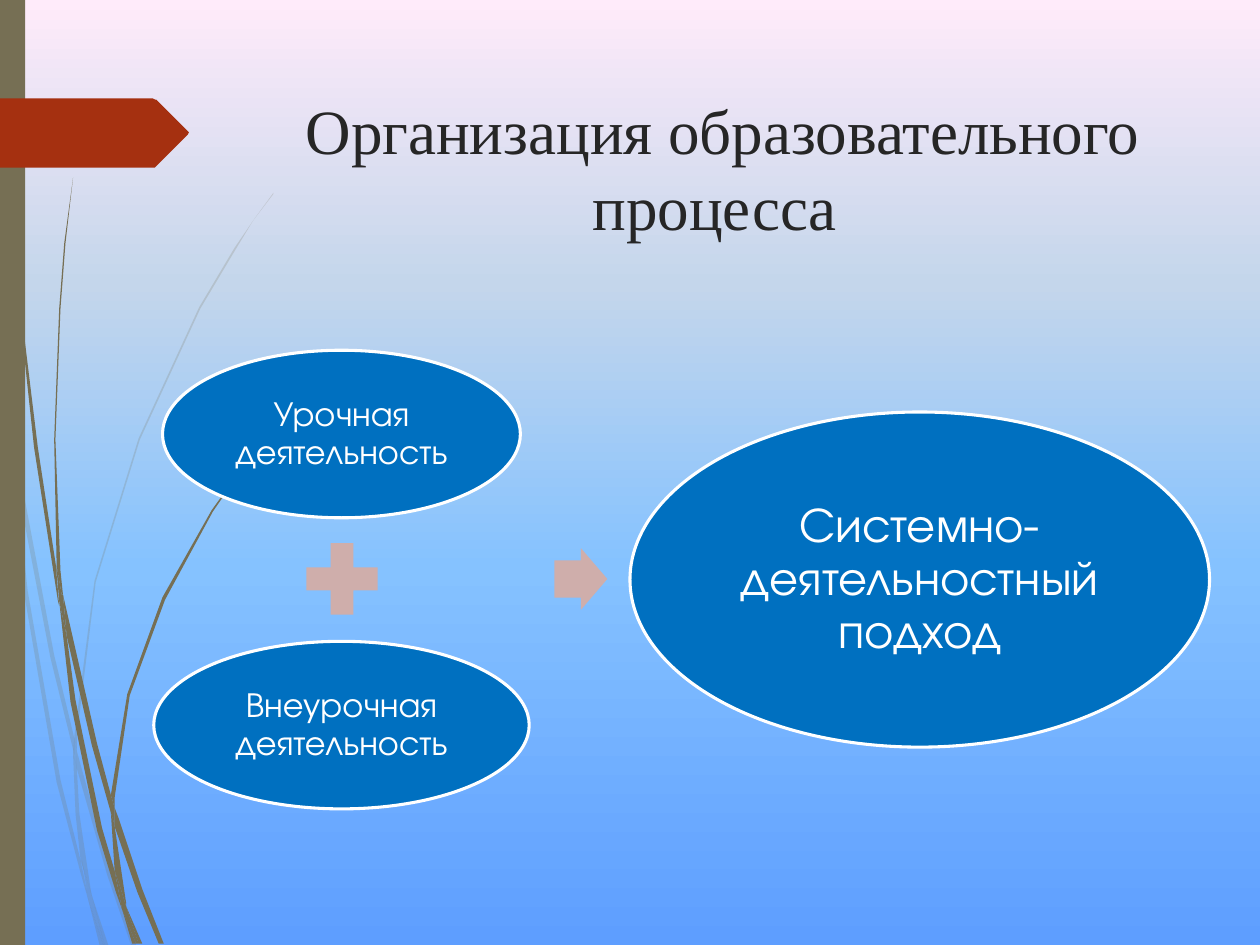
from copy import deepcopy

from pptx import Presentation
from pptx.dml.color import RGBColor
from pptx.enum.shapes import MSO_SHAPE
from pptx.enum.text import MSO_ANCHOR, PP_ALIGN
from pptx.oxml.ns import qn
from pptx.util import Emu, Pt
from lxml.etree import SubElement

PX = 9144

COLORS = {
    "stem": "766F54",
    "tab": "A53010",
    "title": "262626",
    "oval": "0070C0",
    "sign": "CFAEAB",
    "white": "FFFFFF",
}

SKY = [(0, "5E9EFF"), (0.4, "85C2FF"), (0.7, "C4D6EB"), (1, "FFEBFA")]

PALE_STEMS = [
    [(8, 350), (6, 322), (0, 282), (0, 299), (7, 344)],
    [(40, 522), (59, 599), (59, 586), (43, 520), (10, 345), (12, 376)],
    [(64, 607), (61, 596), (61, 610), (85, 694), (104, 750), (108, 750), (88, 692)],
    [(83, 750), (86, 750), (73, 711)],
    [(64, 683), (48, 619), (22, 469), (12, 376), (8, 350), (19, 470), (45, 621),
     (64, 693), (70, 714), (69, 707)],
    [(58, 599), (60, 646), (64, 683), (67, 692), (73, 711), (72, 706), (63, 646),
     (61, 610), (61, 608)],
    [(61, 584), (76, 462), (111, 349), (159, 245), (187, 198), (201, 175), (217, 154),
     (217, 153), (201, 175), (186, 197), (158, 244), (110, 348), (75, 461), (59, 584),
     (59, 586), (61, 596)],
    [(70, 714), (79, 750), (82, 750)],
    [(61, 608), (61, 610), (61, 596), (59, 586), (58, 599)],
    [(67, 692), (65, 683), (69, 707), (70, 714), (82, 750), (83, 750), (73, 711)],
]

DARK_STEMS = [
    [(5, 110), (14, 233), (27, 355), (46, 477), (47, 481), (45, 457), (45, 453),
     (30, 355), (15, 232), (6, 109), (4, 48), (3, 0), (2, 0), (3, 48)],
    [(73, 592), (88, 645), (88, 633), (88, 631), (77, 590), (50, 472), (53, 505)],
    [(94, 649), (91, 641), (91, 656), (109, 708), (126, 749), (130, 749), (113, 706)],
    [(91, 691), (81, 657), (60, 556), (53, 505), (47, 477), (56, 557), (77, 659),
     (92, 708), (97, 722), (96, 717)],
    [(50, 472), (48, 453), (44, 349), (48, 245), (52, 193), (58, 141), (51, 193),
     (47, 245), (43, 349), (45, 449), (49, 472)],
    [(110, 749), (113, 749), (100, 719)],
    [(47, 477), (53, 505), (50, 472), (49, 472), (45, 449), (45, 453)],
    [(91, 633), (103, 552), (131, 476), (169, 406), (191, 374), (203, 359), (216, 344),
     (215, 344), (203, 358), (191, 373), (168, 405), (129, 474), (101, 551), (88, 631),
     (91, 641)],
    [(97, 722), (105, 749), (108, 749)],
    [(88, 645), (91, 691), (96, 706), (100, 719), (100, 716), (91, 656), (90, 651)],
    [(88, 645), (90, 651), (91, 656), (91, 641), (88, 631), (88, 633)],
    [(96, 706), (91, 691), (96, 717), (97, 722), (108, 749), (110, 749), (100, 719)],
]

TAB = [(149, 107), (124, 132), (123, 133), (121, 133), (0, 133), (0, 78), (121, 78),
       (123, 79), (124, 79), (149, 104), (150, 105)]


class SlideBuilder:
    def __init__(self, page, colors):
        self.page = page
        self.colors = colors

    def color(self, name):
        return RGBColor.from_string(self.colors[name])

    def background(self, stops):
        fill = self.page.background.fill
        fill.gradient()
        fill.gradient_angle = 90
        stop_list = self.page._element.find(".//" + qn("a:gsLst"))
        for _ in stops[2:]:
            stop_list.append(deepcopy(stop_list[0]))
        for stop, (position, value) in zip(fill.gradient_stops, stops):
            stop.position = position
            stop.color.rgb = RGBColor.from_string(value)

    def paint(self, shape, fill, opacity=100):
        shape.shadow.inherit = False
        shape.fill.solid()
        shape.fill.fore_color.rgb = self.color(fill)
        shape.line.fill.background()
        if opacity < 100:
            color = shape._element.spPr.find(".//" + qn("a:srgbClr"))
            SubElement(color, qn("a:alpha")).set("val", str(opacity * 1000))

    def outline(self, points, fill, opacity=100):
        builder = self.page.shapes.build_freeform(*points[0], scale=PX)
        builder.add_line_segments(points[1:], close=True)
        self.paint(builder.convert_to_shape(), fill, opacity)

    def shape(self, kind, box, fill, adjustments=()):
        shape = self.page.shapes.add_shape(kind, *(Emu(n * PX) for n in box))
        self.paint(shape, fill)
        for index, value in enumerate(adjustments):
            shape.adjustments[index] = value
        return shape

    def add_text(self, frame, text, size, font, color):
        frame.word_wrap = True
        para = frame.paragraphs[0]
        para.alignment = PP_ALIGN.CENTER
        span = para.add_run()
        span.text = text
        span.font.size = Pt(size)
        span.font.name = font
        span.font.color.rgb = self.color(color)
        return para

    def title(self, box, text):
        frame = self.page.shapes.add_textbox(*(Emu(n * PX) for n in box)).text_frame
        self.add_text(frame, text, 36, "Times New Roman", "title")

    def oval(self, box, text, size, inset):
        shape = self.shape(MSO_SHAPE.OVAL, box, "oval")
        shape.line.color.rgb = self.color("white")
        shape.line.width = Pt(1.75)
        frame = shape.text_frame
        frame.vertical_anchor = MSO_ANCHOR.MIDDLE
        frame.margin_left = frame.margin_right = Emu(inset * PX)
        frame.margin_top = frame.margin_bottom = Emu(inset * PX)
        para = self.add_text(frame, text, size, "TeX Gyre Adventor", "white")
        para.line_spacing = 0.9


def main():
    deck = Presentation()
    deck.slide_width = Emu(1000 * PX)
    deck.slide_height = Emu(750 * PX)
    slide = SlideBuilder(deck.slides.add_slide(deck.slide_layouts[6]), COLORS)

    slide.background(SKY)
    for stem in PALE_STEMS:
        slide.outline(stem, "stem", 20)
    for stem in DARK_STEMS:
        slide.outline(stem, "stem")
    slide.shape(MSO_SHAPE.RECTANGLE, (0, 0, 20, 750), "stem")
    slide.outline(TAB, "tab")

    slide.title((213, 68, 721, 140), "Организация образовательного процесса ")
    slide.oval((129, 278, 284, 133), "Урочная деятельность", 20, 3)
    slide.shape(MSO_SHAPE.MATH_PLUS, (233, 421, 77, 77), "sign")
    slide.oval((122, 509, 298, 133), "Внеурочная деятельность", 20, 3)
    slide.shape(MSO_SHAPE.RIGHT_ARROW, (440, 435, 42, 49), "sign", (0.6, 0.5))
    slide.oval((500, 327, 460, 266), "Системно-деятельностный подход", 28, 4)

    deck.save("out.pptx")


if __name__ == "__main__":
    main()
